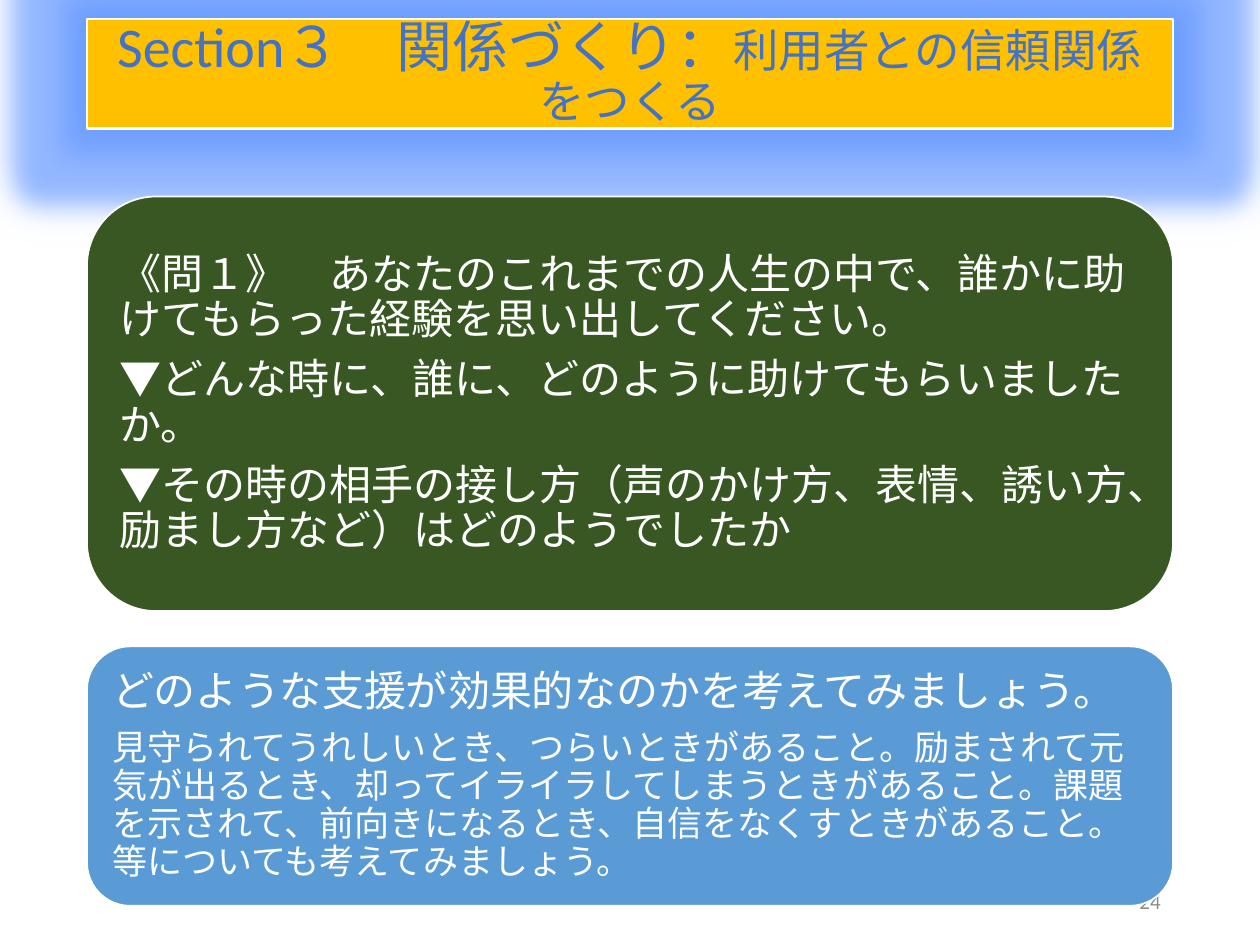
import pptx
import pptx.util
import pptx.dml.color
from lxml import etree
from pptx.enum.shapes import MSO_SHAPE
from pptx.enum.text import MSO_ANCHOR, PP_ALIGN
from pptx.oxml.ns import qn

W, H = 10, 7.5
LEFT, WIDTH = 0.069, 0.862  # shared column, as shares of the slide width


def rgb(value):
    return pptx.dml.color.RGBColor.from_string(value)


def place(x, y, w, h):
    """Turn shares of the slide into lengths."""
    return [pptx.util.Inches(v) for v in (x * W, y * H, w * W, h * H)]


def add_box(slide, kind, box, fill, line_width):
    sp = slide.shapes.add_shape(kind, *place(*box))
    sp.shadow.inherit = False
    sp.fill.solid()
    sp.fill.fore_color.rgb = rgb(fill)
    sp.line.color.rgb = rgb("FFFFFF")
    sp.line.width = pptx.util.Pt(line_width)
    return sp


def set_text(tf, paragraphs, color, align, spacing=None, gap=0):
    """Each paragraph is a list of (text, size) runs; gap is a share of the size."""
    tf.word_wrap = True
    tf.vertical_anchor = MSO_ANCHOR.MIDDLE
    for i, runs in enumerate(paragraphs):
        p = tf.add_paragraph() if i else tf.paragraphs[0]
        p.alignment = align
        p.line_spacing = spacing
        p.space_after = pptx.util.Pt(gap * runs[0][1])
        for text, size in runs:
            r = p.add_run()
            r.text = text
            r.font.size = pptx.util.Pt(size)
            r.font.name = "Calibri"
            r.font.color.rgb = rgb(color)


def add_effect(effects, name, color, alpha, **attributes):
    effect = etree.SubElement(effects, qn(f"a:{name}"), **attributes)
    clr = etree.SubElement(effect, qn("a:srgbClr"), val=color)
    etree.SubElement(clr, qn("a:alpha"), val=str(alpha * 1000))


def add_title(slide, box, runs):
    sp = add_box(slide, MSO_SHAPE.RECTANGLE, box, "FFC000", 1.5)
    set_text(sp.text_frame, [runs], "4472C4", PP_ALIGN.CENTER, 0.9)
    # Blue halo: a wide glow over a tighter shadow
    effects = sp._element.spPr.find(qn("a:effectLst"))
    add_effect(effects, "glow", "6699FF", 60, rad=str(pptx.util.Inches(0.4)))
    add_effect(effects, "outerShdw", "6699FF", 100, algn="ctr", rotWithShape="0",
               blurRad=str(pptx.util.Inches(0.2)), dist="0", dir="0")


def add_panel(slide, box, fill, paragraphs):
    sp = add_box(slide, MSO_SHAPE.ROUNDED_RECTANGLE, box, fill, 1)
    tf = sp.text_frame
    tf.margin_left = tf.margin_right = pptx.util.Inches(0.1)
    tf.margin_top = tf.margin_bottom = pptx.util.Inches(0.1)
    set_text(tf, paragraphs, "FFFFFF", PP_ALIGN.LEFT, 0.9, 0.35)


def add_page_number(slide, box, number):
    tb = slide.shapes.add_textbox(*place(*box))
    set_text(tb.text_frame, [[(number, 12)]], "8C8C8C", PP_ALIGN.RIGHT)


def main():
    prs = pptx.Presentation()
    prs.slide_width = pptx.util.Inches(W)
    prs.slide_height = pptx.util.Inches(H)
    slide = prs.slides.add_slide(prs.slide_layouts[6])

    # Page number, partly under the lower panel
    add_page_number(slide, (0.706, 6.95 / H, 0.225, 0.4 / H), "24")

    # Title band
    add_title(slide, (LEFT, 0.02, WIDTH, 0.87 / H), [
        ("Section３　関係づくり：", 32),
        ("利用者との信頼関係をつくる", 26),
    ])

    # Question panel
    add_panel(slide, (LEFT, 1.56 / H, WIDTH, 3.29 / H), "385723", [
        [("《問１》　あなたのこれまでの人生の中で、誰かに助けてもらった経験を思い出してください。", 24)],
        [("▼どんな時に、誰に、どのように助けてもらいましたか。", 24)],
        [("▼その時の相手の接し方（声のかけ方、表情、誘い方、励まし方など）はどのようでしたか", 24)],
    ])

    # Reflection panel
    add_panel(slide, (LEFT, 5.13 / H, WIDTH, 2.06 / H), "5B9BD5", [
        [("どのような支援が効果的なのかを考えてみましょう。", 24)],
        [("見守られてうれしいとき、つらいときがあること。励まされて元気が出るとき、"
          "却ってイライラしてしまうときがあること。課題を示されて、前向きになるとき、"
          "自信をなくすときがあること。等についても考えてみましょう。", 20)],
    ])

    prs.save("out.pptx")


if __name__ == "__main__":
    main()
